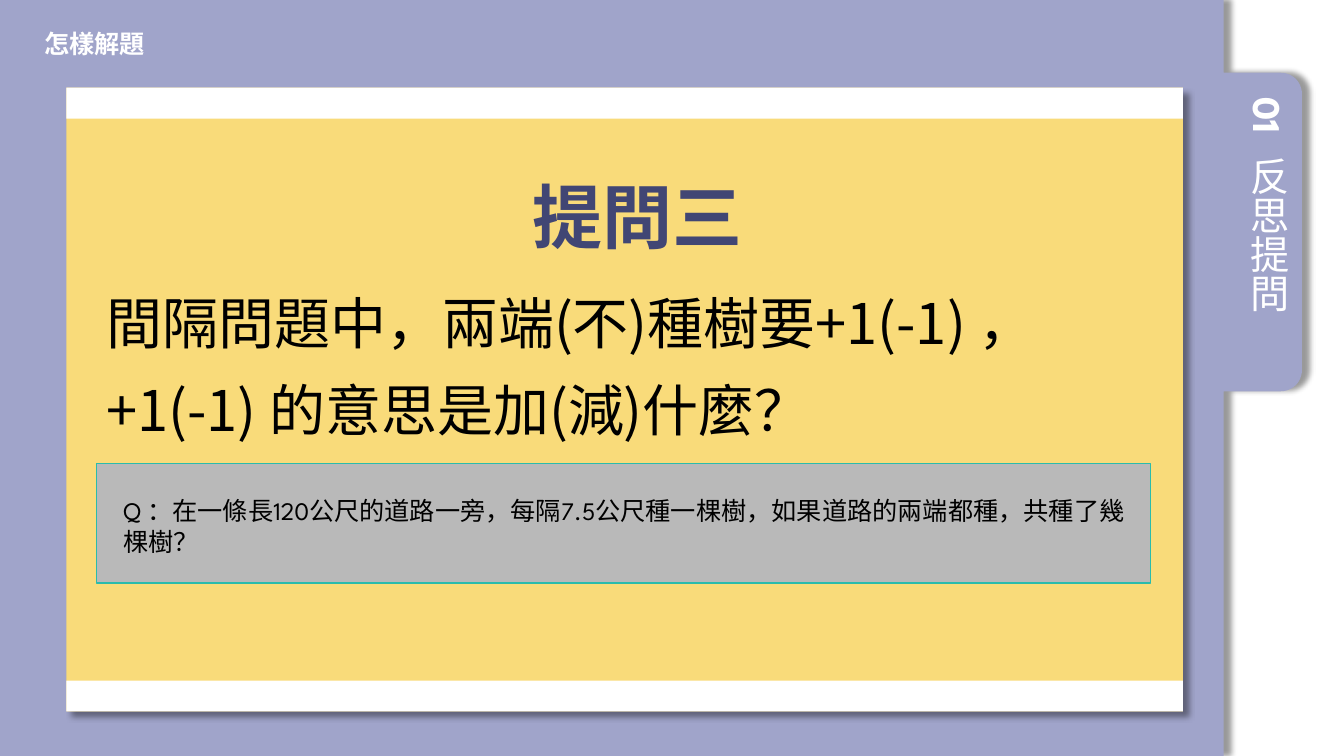
import math
from dataclasses import dataclass

import pptx
import pptx.util
import pptx.dml.color
import pptx.enum.shapes
import pptx.enum.text
import pptx.oxml
import pptx.oxml.ns
from lxml import etree

Pt = pptx.util.Pt
ALIGN = pptx.enum.text.PP_ALIGN
ANCHOR = pptx.enum.text.MSO_ANCHOR


@dataclass(frozen=True)
class Theme:
    lavender: str = "A0A4CA"
    yellow: str = "F9DB7A"
    indigo: str = "414674"
    grey: str = "B9B9B9"
    teal: str = "2BBBAC"
    white: str = "FFFFFF"
    black: str = "000000"
    cjk: str = "Noto Sans CJK SC"
    spartan: str = "League Spartan"
    title_size: int = 50
    question_size: int = 40
    tab_size: int = 28
    small_size: int = 18


THEME = Theme()


def rgb(value):
    return pptx.dml.color.RGBColor.from_string(value)


def paint(shape, fill, line=None):
    shape.shadow.inherit = False
    shape.fill.solid()
    shape.fill.fore_color.rgb = rgb(fill)
    if line:
        shape.line.color.rgb = rgb(line)
        shape.line.width = Pt(1)
    else:
        shape.line.fill.background()


def cast_shadow(shape, angle):
    """Fill the empty effect list with a soft outer shadow."""
    effects = shape.element.spPr.find(pptx.oxml.ns.qn("a:effectLst"))
    shadow = etree.SubElement(
        effects, pptx.oxml.ns.qn("a:outerShdw"), blurRad=str(Pt(4)),
        dist=str(Pt(6)), dir=str(angle * 60000), algn="tl", rotWithShape="0")
    color = etree.SubElement(shadow, pptx.oxml.ns.qn("a:srgbClr"), val=THEME.black)
    etree.SubElement(color, pptx.oxml.ns.qn("a:alpha"), val="40000")


def add_panel(slide, box, fill, line=None):
    panel = slide.shapes.add_shape(
        pptx.enum.shapes.MSO_SHAPE.RECTANGLE, *(Pt(v) for v in box))
    paint(panel, fill, line)
    return panel


def add_backdrop(slide):
    """Full-height page with a rounded tab on its right edge."""
    edge, tab_right, tab_top, tab_bottom, radius = 874, 930, 52, 279.5, 15

    def corner(center_y, start):
        angles = (math.radians(start + step * 7.5) for step in range(13))
        return [(tab_right - radius + radius * math.cos(a),
                 center_y + radius * math.sin(a)) for a in angles]

    outline = [(edge, 0), (edge, tab_top),
               *corner(tab_top + radius, -90), *corner(tab_bottom - radius, 0),
               (edge, tab_bottom), (edge, 540), (0, 540)]
    builder = slide.shapes.build_freeform(0, 0)
    builder.add_line_segments([(Pt(x), Pt(y)) for x, y in outline])
    backdrop = builder.convert_to_shape()
    paint(backdrop, THEME.lavender)
    cast_shadow(backdrop, 0)


def write(shape, text, *, size, font, color, bold=False, align=ALIGN.LEFT,
          spacing=1.0, anchor=ANCHOR.TOP, vertical=False):
    frame = shape.text_frame
    frame.word_wrap = True
    frame.auto_size = pptx.enum.text.MSO_AUTO_SIZE.NONE
    frame.vertical_anchor = anchor
    if vertical:
        body = shape.element.txBody.find(pptx.oxml.ns.qn("a:bodyPr"))
        body.set("vert", "eaVert")
    paragraph = frame.paragraphs[0]
    paragraph.alignment = align
    paragraph.line_spacing = spacing
    run = paragraph.add_run()
    run.text = text
    run.font.size = Pt(size)
    run.font.name = font
    run.font.bold = bold
    run.font.color.rgb = rgb(color)
    # East Asian characters take the same typeface
    latin = run.font._element.find(pptx.oxml.ns.qn("a:latin"))
    east_asian = etree.Element(pptx.oxml.ns.qn("a:ea"), typeface=font)
    latin.addnext(east_asian)


def add_text(slide, box, text, **style):
    write(slide.shapes.add_textbox(*(Pt(v) for v in box)), text, **style)


def place_title(slide, box, text, **style):
    title = slide.shapes.title
    title.left, title.top, title.width, title.height = (Pt(v) for v in box)
    write(title, text, **style)
    # Bring the title in front of the panels drawn so far
    title.element.getparent().append(title.element)


def main():
    deck = pptx.Presentation()
    deck.slide_width, deck.slide_height = Pt(960), Pt(540)
    slide = deck.slides.add_slide(deck.slide_layouts[5])

    # Page, tab and running head
    add_backdrop(slide)
    tab = dict(size=THEME.tab_size, color=THEME.white, spacing=0.9, vertical=True)
    add_text(slide, (875.5, 105, 47.5, 171.5), "反思提問", font=THEME.cjk, **tab)
    add_text(slide, (875.5, 62.5, 47.5, 42.5), "01", font=THEME.spartan,
             bold=True, **tab)
    add_text(slide, (24.5, 18.5, 310, 28), "怎樣解題", size=THEME.small_size,
             font=THEME.spartan, color=THEME.white, bold=True, spacing=0.9,
             anchor=ANCHOR.MIDDLE)

    # Card with a white strip along its top and bottom
    left, top, width, height, strip = 47.5, 62.7, 797.5, 445.5, 22
    card = add_panel(slide, (left, top, width, height), THEME.yellow)
    cast_shadow(card, 45)
    for strip_top in (top, top + height - strip):
        add_panel(slide, (left, strip_top, width, strip), THEME.white)

    # Question
    place_title(slide, (335, 120.5, 241, 67.5), "提問三", size=THEME.title_size,
                font=THEME.cjk, color=THEME.indigo, bold=True, align=ALIGN.CENTER)
    add_text(slide, (69, 188, 753, 127.5),
             "間隔問題中，兩端(不)種樹要+1(-1) ， +1(-1) 的意思是加(減)什麼？",
             size=THEME.question_size, font=THEME.cjk, color=THEME.black,
             spacing=1.3)

    # Worked example
    add_panel(slide, (69, 331, 753, 85.5), THEME.grey, THEME.teal)
    add_text(slide, (81, 350.5, 741.5, 51),
             "Q ：在一條長120公尺的道路一旁，每隔7.5公尺種一棵樹，"
             "如果道路的兩端都種，共種了幾棵樹？",
             size=THEME.small_size, font=THEME.spartan, color=THEME.black)

    deck.save("out.pptx")


if __name__ == "__main__":
    main()
